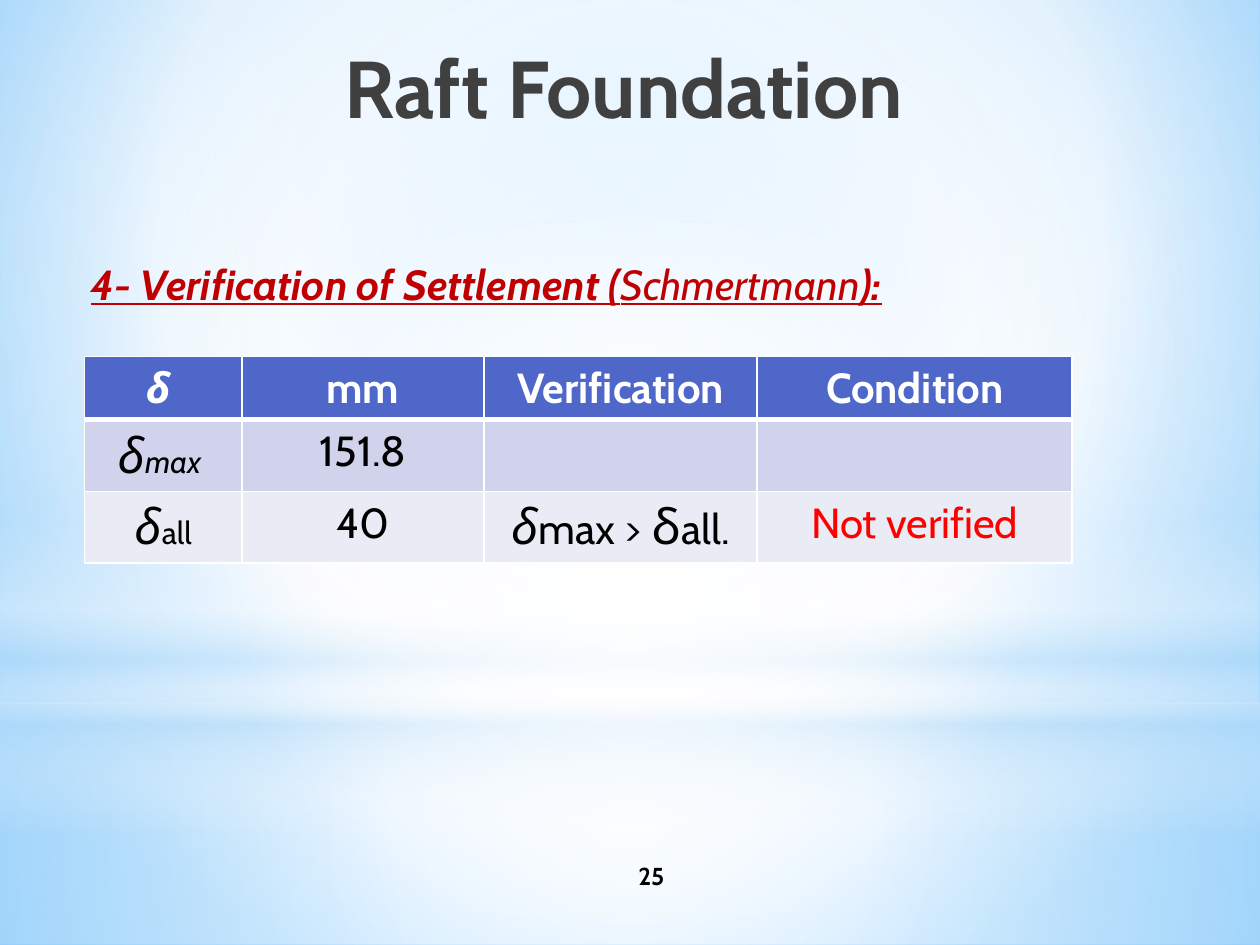
import pptx
import pptx.util
import pptx.dml.color
import pptx.enum.shapes
import pptx.enum.text
import pptx.oxml
import pptx.oxml.ns

Inches, Pt = pptx.util.Inches, pptx.util.Pt
RGB = pptx.dml.color.RGBColor
ALIGN, ANCHOR = pptx.enum.text.PP_ALIGN, pptx.enum.text.MSO_ANCHOR
SHAPE = pptx.enum.shapes.MSO_SHAPE
qn = pptx.oxml.ns.qn

FONT = "Cabin"
BLACK = RGB(0, 0, 0)
WHITE = RGB(255, 255, 255)
GREY = RGB(0x40, 0x40, 0x40)
RED = RGB(0xFF, 0, 0)
DARK = RGB(0xC0, 0, 0)
HEAD = RGB(0x4E, 0x67, 0xC8)
BANDS = [HEAD, RGB(0xD0, 0xD3, 0xEB), RGB(0xE9, 0xEB, 0xF5)]
SKY = RGB(0xB4, 0xDC, 0xFA)
LIGHT = RGB(0x9E, 0xD5, 0xFF)
DEEP = RGB(0x5B, 0xB9, 0xFF)


def write(frame, text, size=24, color=BLACK, bold=False, italic=False,
          line=None, align=ALIGN.CENTER):
    """Add a run to the first paragraph of a text frame."""
    par = frame.paragraphs[0]
    par.alignment = align
    run = par.add_run()
    run.text = text
    font = run.font
    font.name, font.size, font.color.rgb = FONT, Pt(size), color
    font.bold, font.italic, font.underline = bold, italic, line


def blend(fill, root, stops, focus=None):
    """Fill with (position, colour, opacity) stops, from a focus or downwards."""
    fill.gradient()
    old = next(root.iter(qn("a:gradFill")))
    marks = "".join(
        f'<a:gs pos="{pos * 1000}"><a:srgbClr val="{color}">'
        f'<a:alpha val="{alpha * 1000}"/></a:srgbClr></a:gs>'
        for pos, color, alpha in stops)
    if focus:
        rect = " ".join(f'{side}="{n * 1000}"' for side, n in zip("ltrb", focus))
        kind = f'<a:path path="circle"><a:fillToRect {rect}/></a:path>'
    else:
        kind = '<a:lin ang="5400000" scaled="0"/>'
    new = pptx.oxml.parse_xml(
        f'<a:gradFill {pptx.oxml.ns.nsdecls("a")} rotWithShape="1">'
        f'<a:gsLst>{marks}</a:gsLst>{kind}</a:gradFill>')
    old.getparent().replace(old, new)


deck = pptx.Presentation()
deck.slide_width, deck.slide_height = Inches(10), Inches(7.5)
slide = deck.slides.add_slide(deck.slide_layouts[5])

# Background and its soft light layers
blend(slide.background.fill, slide.element,
      [(0, LIGHT, 100), (60, WHITE, 100), (100, DEEP, 100)], (20, 10, 20, 60))
MID = (50, 50, 50, 50)
layers = [
    (SHAPE.RECTANGLE, 5.58, 1.92, MID,
     [(0, WHITE, 91), (37, WHITE, 76), (100, SKY, 79)]),
    (SHAPE.RECTANGLE, 0, 5.58, MID,
     [(0, WHITE, 89), (48, WHITE, 62), (100, SKY, 79)]),
    (SHAPE.RECTANGLE, 4.12, 2.5, None,
     [(0, WHITE, 0), (29, WHITE, 30), (45, SKY, 40),
      (55, WHITE, 26), (65, SKY, 60), (100, WHITE, 0)]),
    (SHAPE.OVAL, 1.75, 5.58, MID, [(0, WHITE, 100), (56, WHITE, 0)]),
]
for kind, top, high, focus, stops in layers:
    layer = slide.shapes.add_shape(kind, 0, Inches(top), Inches(10), Inches(high))
    layer.shadow.inherit = False
    layer.line.fill.background()
    blend(layer.fill, layer.element, stops, focus)

# Title, brought in front of the layers
title = slide.shapes.title
title.left, title.top = Inches(1.46), Inches(0.25)
title.width, title.height = Inches(7.12), Inches(1.25)
title.text_frame.vertical_anchor = ANCHOR.TOP
title.text_frame.auto_size = pptx.enum.text.MSO_AUTO_SIZE.NONE
write(title.text_frame, "Raft Foundation ", size=46, color=GREY, bold=True)
slide.shapes.element.append(title.element)

# Page number
page = slide.shapes.add_textbox(Inches(4.17), Inches(6.75), Inches(2), Inches(0.4))
page.text_frame.word_wrap = True
page.text_frame.vertical_anchor = ANCHOR.MIDDLE
write(page.text_frame, "25", size=14, bold=True)

# Settlement table: each cell is a list of (text, format) runs
top = dict(color=WHITE, bold=True)
delta = ("δ", dict(size=28, italic=True))
rows = [
    [[("δ ", dict(top, italic=True))], [("mm", top)],
     [("Verification", top)], [("Condition", top)]],
    [[delta, ("max ", dict(size=18, italic=True))], [("151.8", {})], [], []],
    [[delta, ("all", dict(size=18))], [("40", {})],
     [delta, ("max > ", {}), ("δ", dict(size=28)), ("all.", {})],
     [("Not verified", dict(color=RED))]],
]
table = slide.shapes.add_table(3, 4, Inches(0.67), Inches(2.83),
                               Inches(7.84), Inches(1.64)).table
for col, wide in zip(table.columns, [1.25, 1.92, 2.17, 2.5]):
    col.width = Inches(wide)
for row, high in zip(table.rows, [0.5, 0.57, 0.57]):
    row.height = Inches(high)
for r, row in enumerate(rows):
    for c, runs in enumerate(row):
        cell = table.cell(r, c)
        props = cell._tc.get_or_add_tcPr()
        for side in "LRTB":
            thick = 3 if (r, side) in [(0, "B"), (1, "T")] else 1
            props.append(pptx.oxml.parse_xml(
                f'<a:ln{side} {pptx.oxml.ns.nsdecls("a")} w="{Pt(thick)}">'
                f'<a:solidFill><a:srgbClr val="{WHITE}"/></a:solidFill></a:ln{side}>'))
        cell.fill.solid()
        cell.fill.fore_color.rgb = BANDS[r]
        for text, look in runs:
            write(cell.text_frame, text, **look)

# Section heading
head = slide.shapes.add_textbox(Inches(0.62), Inches(2), Inches(8.38), Inches(0.5))
head.text_frame.word_wrap = True
head.text_frame.auto_size = pptx.enum.text.MSO_AUTO_SIZE.SHAPE_TO_FIT_TEXT
for text, bold in [("4- Verification of Settlement (", True),
                   ("Schmertmann", False), ("):", True)]:
    write(head.text_frame, text, color=DARK, bold=bold, italic=True,
          line=True, align=ALIGN.LEFT)

deck.save("out.pptx")
